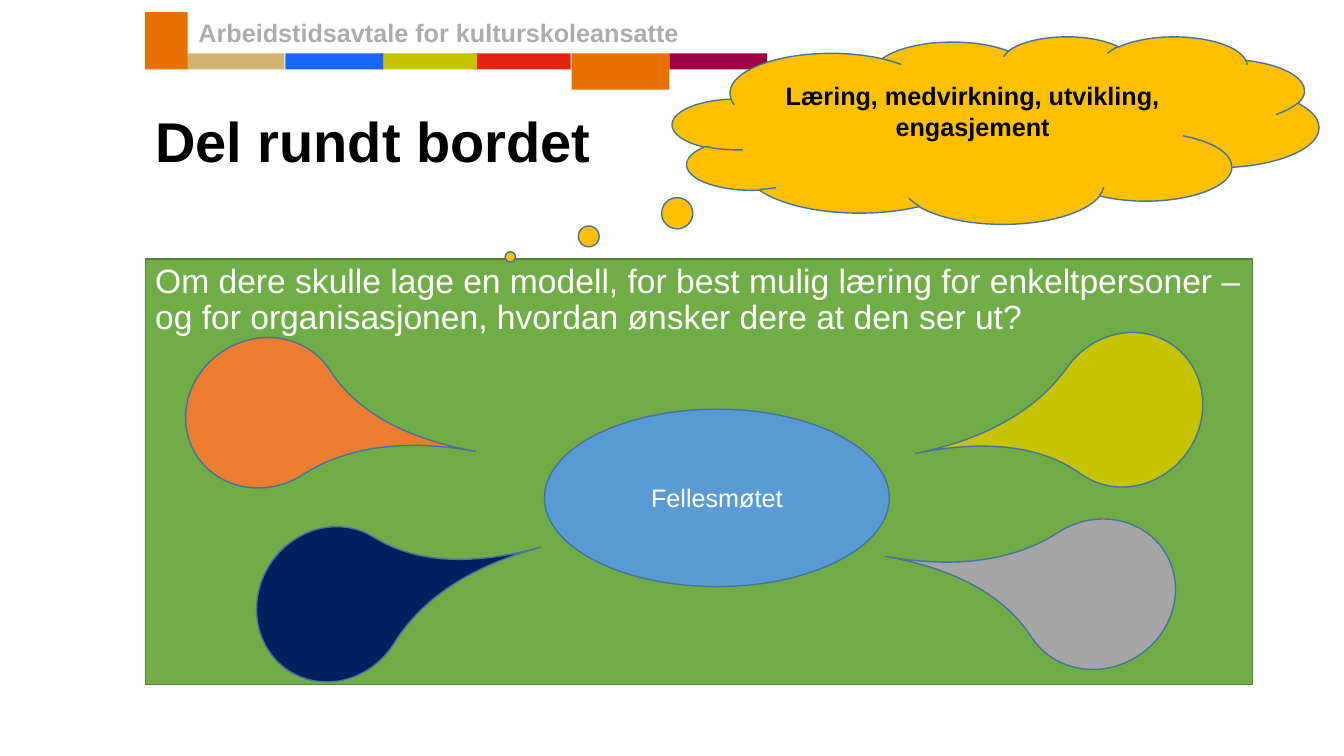
"""Builds the slide "Del rundt bordet" with header bars, thought cloud and shared meeting model."""
from pptx import Presentation
from pptx.dml.color import RGBColor
from pptx.enum.shapes import MSO_SHAPE
from pptx.enum.text import MSO_ANCHOR, PP_ALIGN
from pptx.util import Inches, Pt

RECT, OVAL = MSO_SHAPE.RECTANGLE, MSO_SHAPE.OVAL
TEAR, CLOUD = MSO_SHAPE.TEAR, MSO_SHAPE.CLOUD_CALLOUT
TOP, MIDDLE = MSO_ANCHOR.TOP, MSO_ANCHOR.MIDDLE
LEFT, CENTER = PP_ALIGN.LEFT, PP_ALIGN.CENTER

HEADER = "Arbeidstidsavtale for kulturskoleansatte"
TITLE = "Del rundt bordet"
QUESTION = ("Om dere skulle lage en modell, for best mulig læring for enkeltpersoner – "
            "og for organisasjonen, hvordan ønsker dere at den ser ut?")
MEETING = "Fellesmøtet"
THOUGHT = "Læring, medvirkning, utvikling, engasjement"

COLORS = {
    "black": "000000", "white": "FFFFFF", "header": "AFABAB", "outline": "43739E",
    "orange": "E87000", "sand": "D1B270", "bright_blue": "1766FF", "olive": "C6C400",
    "red": "E3220F", "plum": "9D0047", "green": "70AD47", "dark_green": "538035",
    "blue": "5B9BD5", "peach": "ED7D31", "navy": "002060", "gray": "A5A5A5",
    "yellow": "FFC000",
}
MARGIN = 1.44
BAR_TOP, BAR_W, BAR_H = 0.53, 0.97, 0.16
BARS = [(1.85, "sand", BAR_H), (2.83, "bright_blue", BAR_H), (3.76, "olive", BAR_H),
        (4.69, "red", BAR_H), (5.67, "orange", 0.36), (6.64, "plum", BAR_H)]
DROP_W, DROP_H = 1.46, 1.57
DROPS = [(1.88, 3.31, 57.4, "peach"), (10.45, 3.28, 215.4, "olive"),
         (2.56, 5.21, 31.8, "navy"), (10.16, 5.11, 237.2, "gray")]


def rgb(name):
    """Return the named colour."""
    return RGBColor.from_string(COLORS[name])


def add_shape(s, kind, box, fill, line=None, adjustments=()):
    """Add a flat filled shape with an optional outline."""
    sp = s.shapes.add_shape(kind, *map(Inches, box))
    sp.shadow.inherit = False
    sp.fill.solid()
    sp.fill.fore_color.rgb = rgb(fill)
    if line:
        sp.line.color.rgb = rgb(line)
        sp.line.width = Pt(1)
    else:
        sp.line.fill.background()
    for i, value in enumerate(adjustments):
        sp.adjustments[i] = value
    return sp


def write(sp, text, size=18, color="white", bold=False, align=LEFT, anchor=TOP, spacing=0.9):
    """Write one formatted paragraph into a shape and return its text frame."""
    tf = sp.text_frame
    tf.word_wrap = True
    tf.vertical_anchor = anchor
    p = tf.paragraphs[0]
    p.alignment = align
    p.line_spacing = spacing
    r = p.add_run()
    r.text = text
    r.font.name = "Arial"
    r.font.size = Pt(size)
    r.font.bold = bold
    r.font.color.rgb = rgb(color)
    return tf


def main():
    """Build and save the slide."""
    prs = Presentation()
    prs.slide_width, prs.slide_height = Inches(13.33), Inches(7.5)
    s = prs.slides.add_slide(prs.slide_layouts[5])

    for left, color, height in reversed(BARS):
        add_shape(s, RECT, (left, BAR_TOP, BAR_W, height), color)
    add_shape(s, RECT, (MARGIN, 0.12, 0.42, 0.57), "orange")

    title = s.shapes.title
    title.left, title.top, title.width, title.height = map(Inches, (MARGIN, 1.08, 11, 1.45))
    write(title, TITLE, size=40, color="black", bold=True)

    panel = add_shape(s, RECT, (MARGIN, 2.57, 10.98, 4.22), "green", "dark_green")
    write(panel, QUESTION, size=24)
    header = s.shapes.add_textbox(*map(Inches, (1.87, 0.16, 5.76, 0.4)))
    write(header, HEADER, color="header", bold=True)

    meeting = add_shape(s, OVAL, (5.4, 4.06, 3.42, 1.76), "blue", "outline")
    write(meeting, MEETING, align=CENTER, anchor=MIDDLE, spacing=1.0)
    for left, top, angle, color in DROPS:
        drop = add_shape(s, TEAR, (left, top, DROP_W, DROP_H), color, "outline", [2])
        drop.rotation = angle

    cloud = add_shape(s, CLOUD, (6.67, 0.36, 6.41, 1.86), "yellow", "outline", [-0.751, 0.677])
    tf = write(cloud, THOUGHT, color="black", bold=True, align=CENTER, anchor=MIDDLE, spacing=1.0)
    tf.margin_bottom = Inches(0.34)

    prs.save("out.pptx")


if __name__ == "__main__":
    main()
